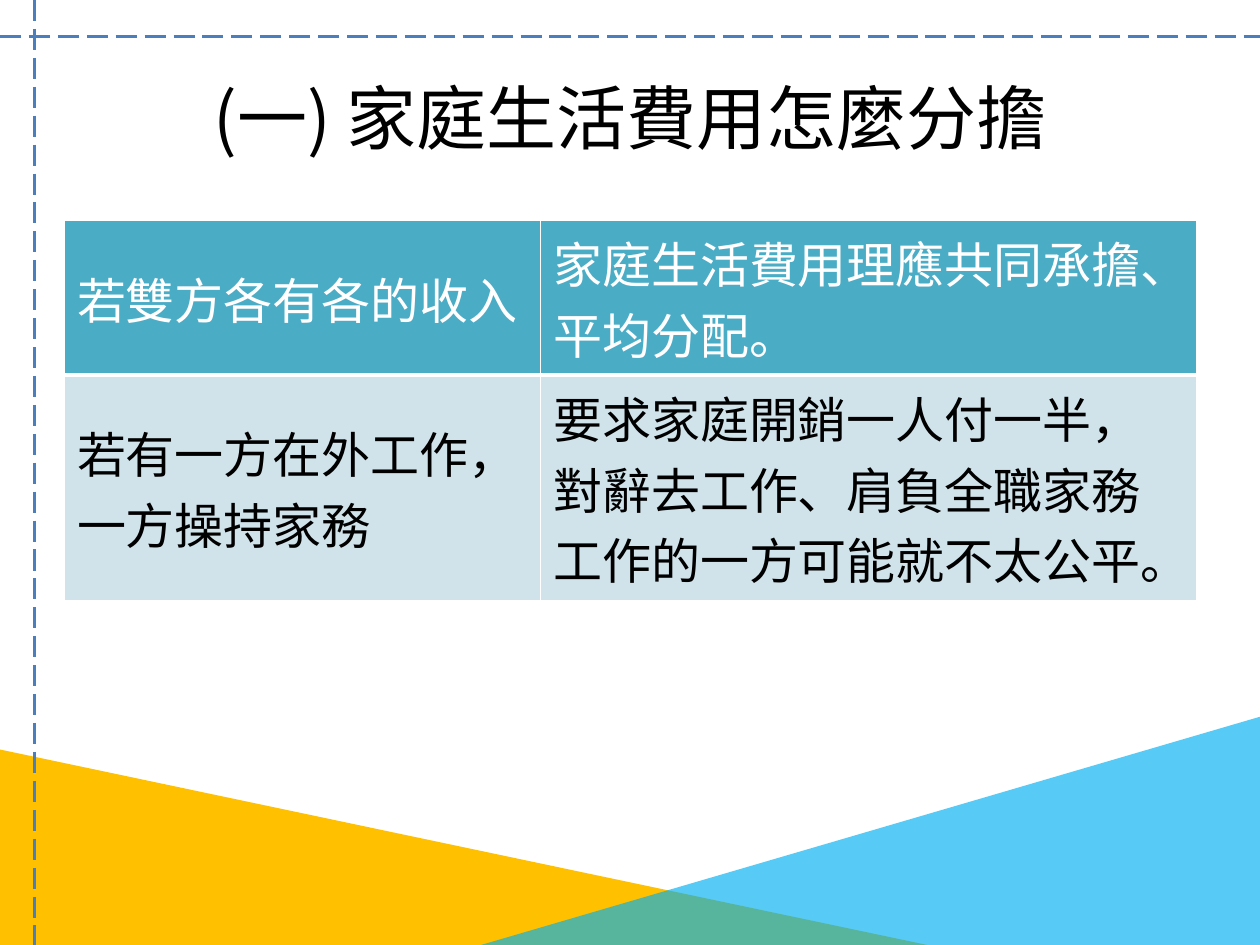
from lxml.etree import SubElement
from pptx import Presentation
from pptx.dml.color import RGBColor
from pptx.enum.dml import MSO_LINE_DASH_STYLE as Dash
from pptx.enum.shapes import MSO_CONNECTOR, MSO_SHAPE
from pptx.enum.text import MSO_ANCHOR, PP_ALIGN
from pptx.oxml.ns import qn
from pptx.util import Cm, Pt

FONT = "Noto Sans CJK SC"
BLACK = RGBColor(0x00, 0x00, 0x00)
WHITE = RGBColor(0xFF, 0xFF, 0xFF)
AMBER = RGBColor(0xFF, 0xC0, 0x00)
SKY = RGBColor(0x00, 0xB0, 0xF0)
RULE_BLUE = RGBColor(0x4B, 0x7E, 0xBC)
TEAL = RGBColor(0x4B, 0xAC, 0xC6)
PALE_TEAL = RGBColor(0xD0, 0xE3, 0xEA)

TITLE = "(一) 家庭生活費用怎麼分擔"
SITUATIONS = [
    ("若雙方各有各的收入", "家庭生活費用理應共同承擔、平均分配。"),
    ("若有一方在外工作，一方操持家務",
     "要求家庭開銷一人付一半，對辭去工作、肩負全職家務工作的一方可能就不太公平。"),
]
# fill, text colour, bottom border in points, height in cm
ROW_STYLES = [(TEAL, WHITE, 3, 3.07), (PALE_TEAL, BLACK, 1, 4.55)]
COLUMN_WIDTHS = (9.6, 13.23)

SLIDE_W, SLIDE_H = 25.4, 19.05
# width, height, colour, opacity in percent, at the right edge
WEDGES = [(18.69, 3.94, AMBER, 100, False), (15.7, 4.6, SKY, 66, True)]
# start and end of the margin rules
RULES = [((0.7, 0), (0.7, SLIDE_H)), ((0, 0.73), (SLIDE_W, 0.73))]


def style_text(paragraph, size, color):
    for name, value in {"name": FONT, "size": Pt(size), "bold": False}.items():
        setattr(paragraph.font, name, value)
    paragraph.font.color.rgb = color
    for run in paragraph.runs:
        run.font.name = FONT
        SubElement(run.font._element, qn("a:ea"), typeface=FONT)


def add_wedge(shapes, width, height, color, opacity, at_right):
    left = SLIDE_W - width if at_right else 0
    wedge = shapes.add_shape(MSO_SHAPE.RIGHT_TRIANGLE, Cm(left),
                             Cm(SLIDE_H - height), Cm(width), Cm(height))
    wedge.shadow.inherit = False
    wedge.line.fill.background()
    wedge.fill.solid()
    wedge.fill.fore_color.rgb = color
    if opacity < 100:
        rgb = wedge._element.spPr.find(".//" + qn("a:srgbClr"))
        SubElement(rgb, qn("a:alpha"), val=str(opacity * 1000))
    if at_right:
        wedge._element.spPr.xfrm.set("flipH", "1")


def add_rule(shapes, start, end):
    ends = [Cm(value) for value in start + end]
    rule = shapes.add_connector(MSO_CONNECTOR.STRAIGHT, *ends)
    rule.line.color.rgb = RULE_BLUE
    rule.line.width = Pt(1.5)
    rule.line.dash_style = Dash.LONG_DASH
    SubElement(rule._element.spPr, qn("a:effectLst"))


def add_borders(cell, bottom):
    properties = cell._tc.get_or_add_tcPr()
    for side, points in {"L": 1, "R": 1, "T": 1, "B": bottom}.items():
        border = SubElement(properties, qn("a:ln" + side), w=str(Pt(points)))
        fill = SubElement(border, qn("a:solidFill"))
        SubElement(fill, qn("a:srgbClr"), val=str(WHITE))


def add_situations(shapes):
    heights = [style[3] for style in ROW_STYLES]
    table = shapes.add_table(
        len(SITUATIONS), len(COLUMN_WIDTHS), Cm(1.3), Cm(4.45),
        Cm(sum(COLUMN_WIDTHS)), Cm(sum(heights))).table
    for column, width in zip(table.columns, COLUMN_WIDTHS):
        column.width = Cm(width)
    for row, texts, style in zip(table.rows, SITUATIONS, ROW_STYLES):
        fill, color, bottom, height = style
        row.height = Cm(height)
        for cell, text in zip(row.cells, texts):
            cell.text = text
            cell.vertical_anchor = MSO_ANCHOR.MIDDLE
            style_text(cell.text_frame.paragraphs[0], 28, color)
            add_borders(cell, bottom)
            cell.fill.solid()
            cell.fill.fore_color.rgb = fill


def main():
    deck = Presentation()
    deck.slide_width, deck.slide_height = Cm(SLIDE_W), Cm(SLIDE_H)
    slide = deck.slides.add_slide(deck.slide_layouts[5])
    for wedge in WEDGES:
        add_wedge(slide.shapes, *wedge)
    for start, end in RULES:
        add_rule(slide.shapes, start, end)

    title = slide.shapes.title
    place = {"left": 1.27, "top": 0.76, "width": 22.86, "height": 3.18}
    for name, value in place.items():
        setattr(title, name, Cm(value))
    title.text_frame.text = TITLE
    title.text_frame.vertical_anchor = MSO_ANCHOR.MIDDLE
    heading = title.text_frame.paragraphs[0]
    heading.alignment = PP_ALIGN.CENTER
    style_text(heading, 40, BLACK)

    add_situations(slide.shapes)
    deck.save("out.pptx")


if __name__ == "__main__":
    main()
